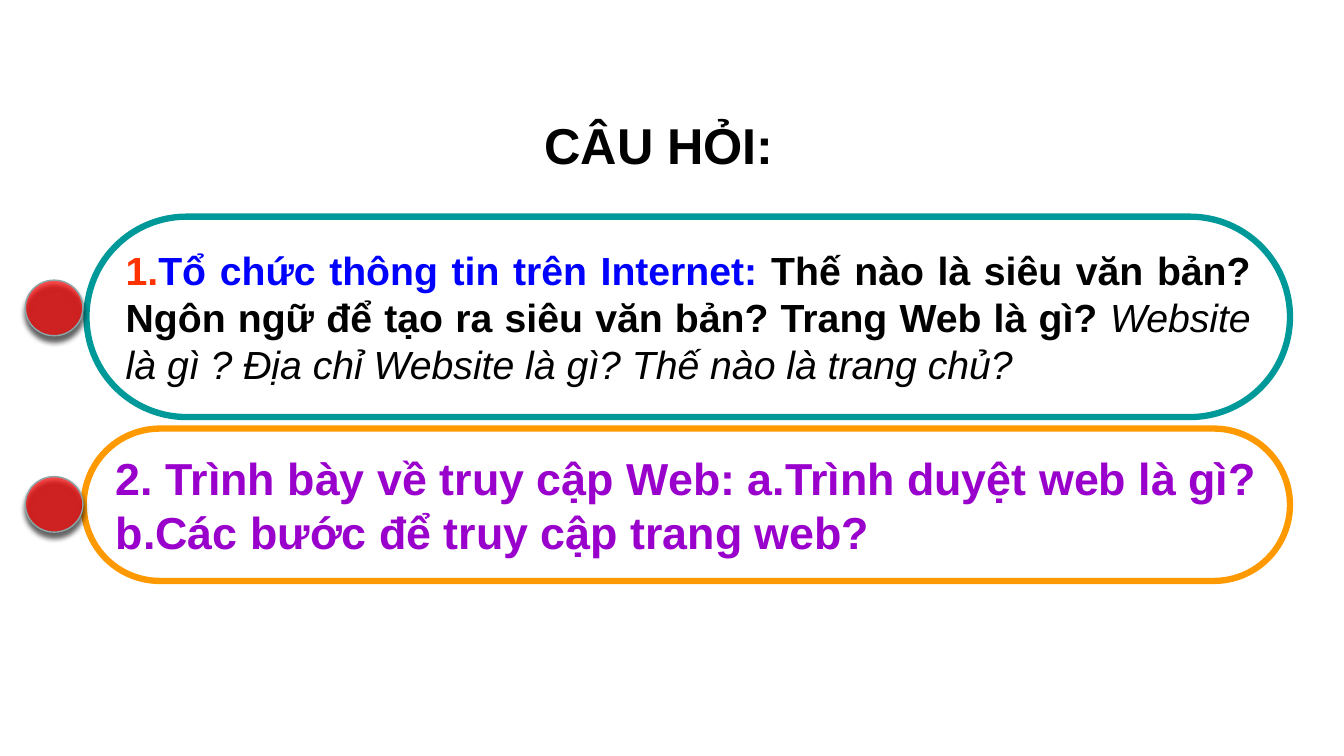
"""Build a slide with a heading and two framed review questions."""
import pptx
import pptx.dml.color
import pptx.enum.shapes
import pptx.enum.text
import pptx.oxml
import pptx.oxml.ns
import pptx.util

Cm, Pt = pptx.util.Cm, pptx.util.Pt
Shape = pptx.enum.shapes.MSO_SHAPE
Align = pptx.enum.text.PP_ALIGN
Anchor = pptx.enum.text.MSO_ANCHOR

TITLE = [("CÂU HỎI:", "000000", True)]
CARDS = [
    {"left": 2.11, "top": 10.8, "high": 3.84, "line": "FF9900", "size": 32, "dot": 12.01,
     "runs": [("2. Trình bày về truy cập Web: a.Trình duyệt web là gì? "
               "b.Các bước để truy cập trang web?", "9900CC", True)]},
    {"left": 2.18, "top": 5.46, "high": 5.05, "line": "009999", "size": 28, "dot": 7.06,
     "runs": [("1.", "FF3300", True),
              ("Tổ chức thông tin trên Internet: ", "0000FF", True),
              ("Thế nào là siêu văn bản? Ngôn ngữ để tạo ra siêu văn bản? "
               "Trang Web là gì? ", "000000", True),
              ("Website là gì ? Địa chỉ Website là gì? Thế nào là trang chủ?",
               "000000", False)]},
]
RIGHT = 32.51
DOT = {"left": 0.64, "wide": 1.45, "high": 1.4, "fill": "FF0000", "line": "8AA6A8"}
SHADOW = ('<a:effectLst %s><a:outerShdw blurRad="50800" dist="50800" dir="5400000">'
          '<a:srgbClr val="000000"><a:alpha val="88000"/></a:srgbClr>'
          '</a:outerShdw></a:effectLst>') % pptx.oxml.ns.nsdecls("a")
ALPHA = '<a:alpha %s val="68000"/>' % pptx.oxml.ns.nsdecls("a")


def tint(color, code):
    color.rgb = pptx.dml.color.RGBColor.from_string(code)


def write(shape, runs, size, align):
    frame = shape.text_frame
    frame.word_wrap = True
    para = frame.paragraphs[0]
    para.alignment = align
    for text, code, bold in runs:
        run = para.add_run()
        run.text = text
        font = run.font
        font.name, font.size = "Arial", Pt(size)
        font.bold, font.italic = bold, not bold
        tint(font.color, code)


def draw(slide, kind, box, line, width):
    shape = slide.shapes.add_shape(kind, *map(Cm, box))
    shape.shadow.inherit = False
    tint(shape.line.color, line)
    shape.line.width = Pt(width)
    return shape


def add_card(slide, card):
    box = card["left"], card["top"], RIGHT - card["left"], card["high"]
    shape = draw(slide, Shape.ROUNDED_RECTANGLE, box, card["line"], 4.5)
    shape.adjustments[0] = 0.5
    shape.fill.background()
    frame = shape.text_frame
    frame.margin_top = frame.margin_bottom = 0
    frame.vertical_anchor = Anchor.MIDDLE
    write(shape, card["runs"], card["size"], Align.JUSTIFY)


def add_dot(slide, top):
    box = DOT["left"], top, DOT["wide"], DOT["high"]
    shape = draw(slide, Shape.OVAL, box, DOT["line"], 1)
    shape.fill.solid()
    tint(shape.fill.fore_color, DOT["fill"])
    props = shape.element.spPr
    tone = props.find(pptx.oxml.ns.qn("a:solidFill"))[0]
    tone.append(pptx.oxml.parse_xml(ALPHA))
    blank = props.find(pptx.oxml.ns.qn("a:effectLst"))
    props.replace(blank, pptx.oxml.parse_xml(SHADOW))


def main():
    deck = pptx.Presentation()
    deck.slide_width, deck.slide_height = Cm(33.87), Cm(19.05)
    slide = deck.slides.add_slide(deck.slide_layouts[6])
    title = slide.shapes.add_textbox(Cm(11.43), Cm(2.74), Cm(10.36), Cm(1.8))
    write(title, TITLE, 36, Align.CENTER)
    for card in CARDS:
        add_card(slide, card)
    for card in CARDS:
        add_dot(slide, card["dot"])
    deck.save("out.pptx")


if __name__ == "__main__":
    main()
